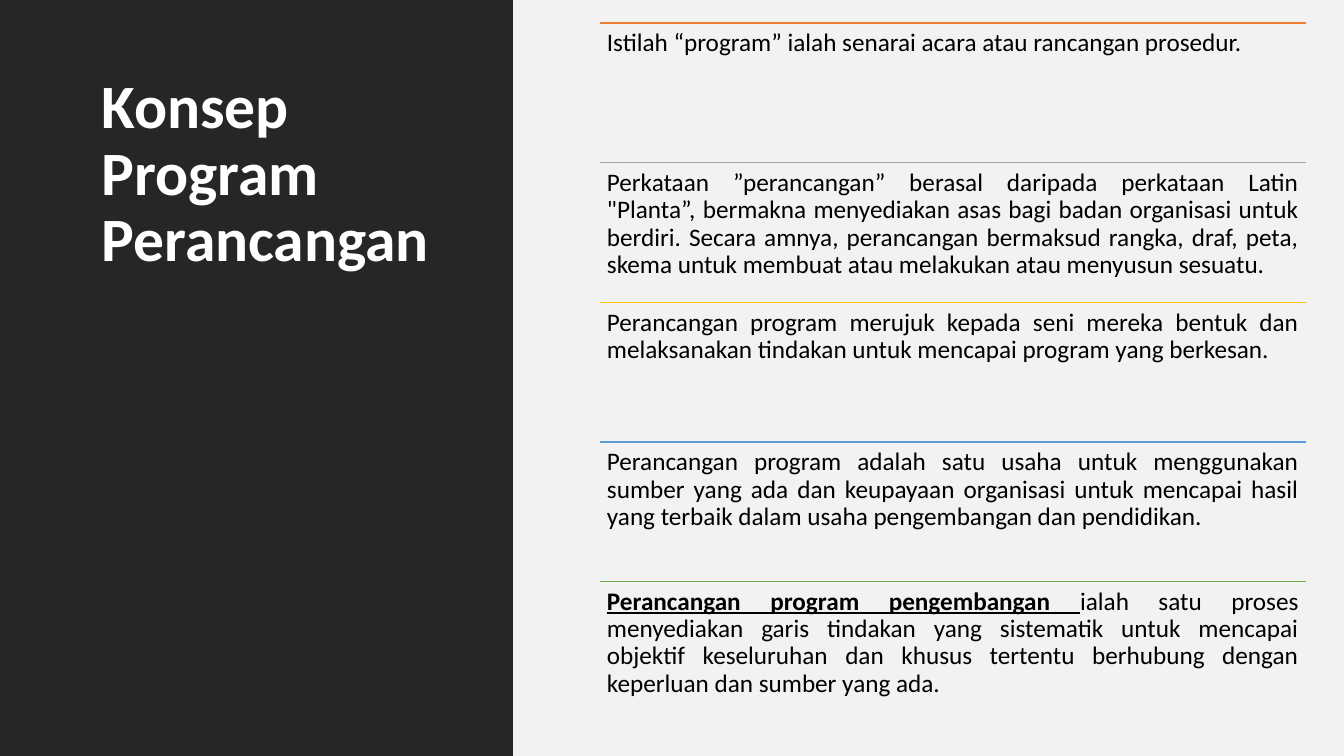
from pptx import Presentation
from pptx.dml.color import RGBColor
from pptx.enum.shapes import MSO_CONNECTOR as Connector, MSO_SHAPE as Shape
from pptx.enum.text import MSO_ANCHOR as Anchor, PP_ALIGN as Align
from pptx.oxml.ns import qn
from pptx.util import Inches, Pt
from lxml.etree import SubElement

COLORS = {
    "dark": "262626", "light": "F2F2F2", "white": "FFFFFF", "black": "000000",
    "orange": "ED7D31", "gray": "A5A5A5", "gold": "FFC000",
    "blue": "5B9BD5", "green": "70AD47",
}
WIDTH, HEIGHT = 13.33, 7.5
SPLIT = 5.09
LEFT, TOP = 5.95, 0.23
ROW_WIDTH, ROW_HEIGHT = 7, 1.385

CONCEPTS = [
    ("orange", "", "Istilah “program” ialah senarai acara atau rancangan prosedur."),
    ("gray", "", "Perkataan ”perancangan” berasal daripada perkataan Latin \"Planta”, "
     "bermakna menyediakan asas bagi badan organisasi untuk berdiri. Secara amnya, "
     "perancangan bermaksud rangka, draf, peta, skema untuk membuat atau melakukan "
     "atau menyusun sesuatu."),
    ("gold", "", "Perancangan program merujuk kepada seni mereka bentuk dan "
     "melaksanakan tindakan untuk mencapai program yang berkesan."),
    ("blue", "", "Perancangan program adalah satu usaha untuk menggunakan sumber yang "
     "ada dan keupayaan organisasi untuk mencapai hasil yang terbaik dalam usaha "
     "pengembangan dan pendidikan."),
    ("green", "Perancangan program pengembangan ", "ialah satu proses menyediakan garis "
     "tindakan yang sistematik untuk mencapai objektif keseluruhan dan khusus tertentu "
     "berhubung dengan keperluan dan sumber yang ada."),
]


def color(name):
    return RGBColor.from_string(COLORS[name])


def add_text(left, top, width, height, size, ink):
    box = page.shapes.add_textbox(Inches(left), Inches(top), Inches(width), Inches(height))
    frame = box.text_frame
    frame.word_wrap = True
    frame.vertical_anchor = Anchor.TOP
    para = frame.paragraphs[0]
    para.line_spacing = 0.9
    para.font.name = "Calibri"
    para.font.size = Pt(size)
    para.font.color.rgb = color(ink)
    return frame, para


deck = Presentation()
deck.slide_width, deck.slide_height = Inches(WIDTH), Inches(HEIGHT)
page = deck.slides.add_slide(deck.slide_layouts[6])

for left, width, fill in [(0, SPLIT, "dark"), (SPLIT, WIDTH - SPLIT, "light")]:
    panel = page.shapes.add_shape(Shape.RECTANGLE, Inches(left), 0, Inches(width), Inches(HEIGHT))
    panel.shadow.inherit = False
    panel.fill.solid()
    panel.fill.fore_color.rgb = color(fill)
    panel.line.fill.background()

frame, title = add_text(0.91, 0.7, 3.59, 6.1, 44, "white")
title.font.bold = True
title.add_run().text = "Konsep Program Perancangan"

for row, (accent, term, text) in enumerate(CONCEPTS):
    top = TOP + row * ROW_HEIGHT
    rule = page.shapes.add_connector(
        Connector.STRAIGHT, Inches(LEFT), Inches(top), Inches(LEFT + ROW_WIDTH), Inches(top))
    rule.line.color.rgb = color(accent)
    rule.line.width = Pt(1)
    SubElement(rule._element.spPr, qn("a:effectLst"))

    frame, para = add_text(LEFT, top, ROW_WIDTH, ROW_HEIGHT, 18, "black")
    frame.margin_left = frame.margin_right = Inches(0.07)
    frame.margin_top = frame.margin_bottom = Inches(0.07)
    para.alignment = Align.JUSTIFY
    if term:
        span = para.add_run()
        span.text = term
        span.font.bold = span.font.underline = True
    para.add_run().text = text

deck.save("out.pptx")
